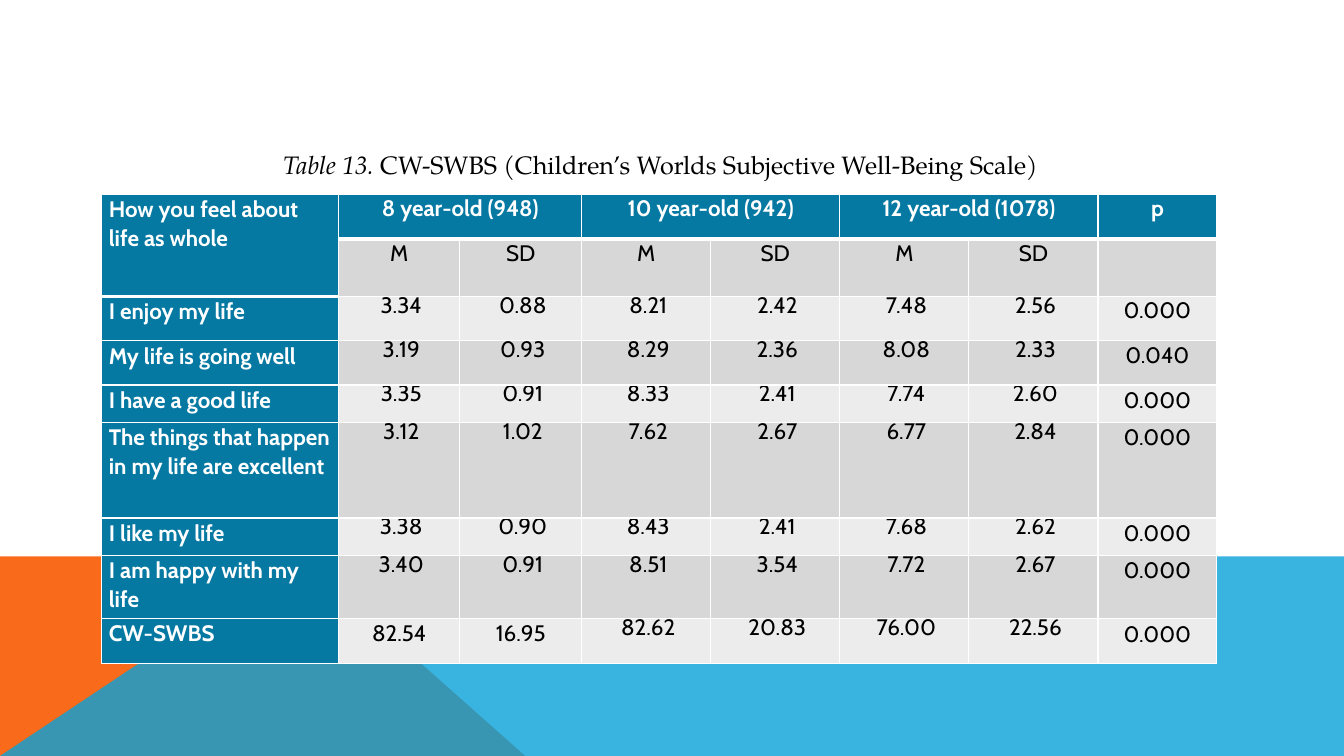
import pptx
import pptx.dml.color
import pptx.enum.text
import pptx.oxml.ns
import pptx.util
import lxml.etree

Inches = pptx.util.Inches
Pt = pptx.util.Pt
RGBColor = pptx.dml.color.RGBColor
Align = pptx.enum.text.PP_ALIGN

WHITE = RGBColor(0xFF, 0xFF, 0xFF)
BLACK = RGBColor(0, 0, 0)
ORANGE = RGBColor(0xF9, 0x6A, 0x1B)
SKY = RGBColor(0x08, 0xA1, 0xD9)
TEAL = RGBColor(0x06, 0x79, 0xA3)
LIGHT = RGBColor(0xEC, 0xEC, 0xEC)
DARK = RGBColor(0xD7, 0xD7, 0xD8)

CAPTION = [("Table 13. ", True), ("CW-SWBS (Children’s Worlds Subjective Well-Being Scale)", False)]
ROWS = [
    ("How you feel about life as whole", "8 year-old (948)", "", "10 year-old (942)", "", "12 year-old (1078)", "", "p"),
    ("", "M", "SD", "M", "SD", "M", "SD", ""),
    ("I enjoy my life", "3.34", "0.88", "8.21", "2.42", "7.48", "2.56", "0.000"),
    ("My life is going well", "3.19", "0.93", "8.29", "2.36", "8.08", "2.33", "0.040"),
    ("I have a good life", "3.35", "0.91", "8.33", "2.41", "7.74", "2.60", "0.000"),
    ("The things that happen in my life are excellent", "3.12", "1.02", "7.62", "2.67", "6.77", "2.84", "0.000"),
    ("I like my life", "3.38", "0.90", "8.43", "2.41", "7.68", "2.62", "0.000"),
    ("I am happy with my life", "3.40", "0.91", "8.51", "3.54", "7.72", "2.67", "0.000"),
    ("CW-SWBS", "82.54", "16.95", "82.62", "20.83", "76.00", "22.56", "0.000"),
]
COLUMN_WIDTHS = [2.35, 1.2, 1.21, 1.28, 1.28, 1.28, 1.28, 1.18]
ROW_HEIGHTS = [0.44, 0.57, 0.44, 0.44, 0.37, 0.95, 0.37, 0.63, 0.44]
MERGES = [((0, 0), (1, 0)), ((0, 1), (0, 2)), ((0, 3), (0, 4)), ((0, 5), (0, 6))]
LAST_ROW = len(ROWS) - 1
LAST_COLUMN = len(COLUMN_WIDTHS) - 1
FOOTER_SHAPES = [
    ([(0, 7.5), (0, 5.52), (2.98, 5.52), (5.21, 7.5)], ORANGE, 100),
    ([(0, 7.5), (2.97, 5.52), (13.33, 5.52), (13.33, 7.5)], SKY, 80),
]


def set_values(target, values):
    for name, value in values.items():
        setattr(target, name, value)


def add_footer_shape(slide, points, color, opacity):
    corners = [(Inches(x), Inches(y)) for x, y in points]
    builder = slide.shapes.build_freeform(*corners[0])
    builder.add_line_segments(corners[1:], close=True)
    shape = builder.convert_to_shape()
    shape.shadow.inherit = False
    shape.line.fill.background()
    shape.fill.solid()
    shape.fill.fore_color.rgb = color
    if opacity < 100:
        color_element = next(shape.fill._xPr.iter(pptx.oxml.ns.qn("a:srgbClr")))
        alpha = lxml.etree.SubElement(color_element, pptx.oxml.ns.qn("a:alpha"))
        alpha.set("val", str(opacity * 1000))


def add_caption(slide):
    box = slide.shapes.add_textbox(Inches(2.71), Inches(1.28), Inches(8.16), Inches(0.51))
    box.text_frame.word_wrap = True
    box.text_frame.auto_size = pptx.enum.text.MSO_AUTO_SIZE.SHAPE_TO_FIT_TEXT
    paragraph = box.text_frame.paragraphs[0]
    paragraph.line_spacing = 1.5
    for text, italic in CAPTION:
        run = paragraph.add_run()
        run.text = text
        set_values(run.font, {"name": "TeX Gyre Pagella", "size": Pt(18), "italic": italic})
        run.font.color.rgb = BLACK


def set_borders(cell, bottom_width):
    properties = cell._tc.get_or_add_tcPr()
    for side, width in {"L": 1, "R": 1, "T": 1, "B": bottom_width}.items():
        line = lxml.etree.SubElement(properties, pptx.oxml.ns.qn("a:ln" + side), w=str(Pt(width)))
        fill = lxml.etree.SubElement(line, pptx.oxml.ns.qn("a:solidFill"))
        lxml.etree.SubElement(fill, pptx.oxml.ns.qn("a:srgbClr"), val=str(WHITE))


def choose_spacing(row, column):
    if column == 0:
        return Pt(20) if row == LAST_ROW else 1.07
    if column == LAST_COLUMN:
        return Pt(20) if row < 4 else 1.07
    if row < 2 or (row == LAST_ROW and column < 3):
        return Pt(20)
    return Pt(16)


def fill_cell(cell, text, row, column):
    heading = row == 0 or column == 0
    set_values(cell, {"margin_left": Inches(0.07), "margin_right": Inches(0.07),
                      "margin_top": 0, "margin_bottom": 0})
    set_borders(cell, 3 if row == 0 or (row == 1 and column == 0) else 1)
    cell.fill.solid()
    cell.fill.fore_color.rgb = TEAL if heading else LIGHT if row % 2 == 0 else DARK
    if not text:
        return
    paragraph = cell.text_frame.paragraphs[0]
    spacing = choose_spacing(row, column)
    set_values(paragraph, {"alignment": Align.LEFT if column == 0 else Align.CENTER,
                           "line_spacing": spacing})
    if spacing == Pt(16):
        paragraph._p.get_or_add_pPr().set("marL", str(Inches(0.04)))
    run = paragraph.add_run()
    run.text = text
    set_values(run.font, {"name": "Cabin", "size": Pt(16), "bold": heading})
    run.font.color.rgb = WHITE if heading else BLACK


def add_scale_table(slide):
    frame = slide.shapes.add_table(len(ROWS), len(COLUMN_WIDTHS), Inches(1.01), Inches(1.93),
                                   Inches(sum(COLUMN_WIDTHS)), Inches(sum(ROW_HEIGHTS)))
    table = frame.table
    for column, width in zip(table.columns, COLUMN_WIDTHS):
        column.width = Inches(width)
    for row, height in zip(table.rows, ROW_HEIGHTS):
        row.height = Inches(height)
    for first, last in MERGES:
        table.cell(*first).merge(table.cell(*last))
    for row, texts in enumerate(ROWS):
        for column, text in enumerate(texts):
            fill_cell(table.cell(row, column), text, row, column)


def main():
    presentation = pptx.Presentation()
    set_values(presentation, {"slide_width": Inches(13.33), "slide_height": Inches(7.5)})
    slide = presentation.slides.add_slide(presentation.slide_layouts[6])
    for points, color, opacity in FOOTER_SHAPES:
        add_footer_shape(slide, points, color, opacity)
    add_caption(slide)
    add_scale_table(slide)
    presentation.save("out.pptx")


if __name__ == "__main__":
    main()
